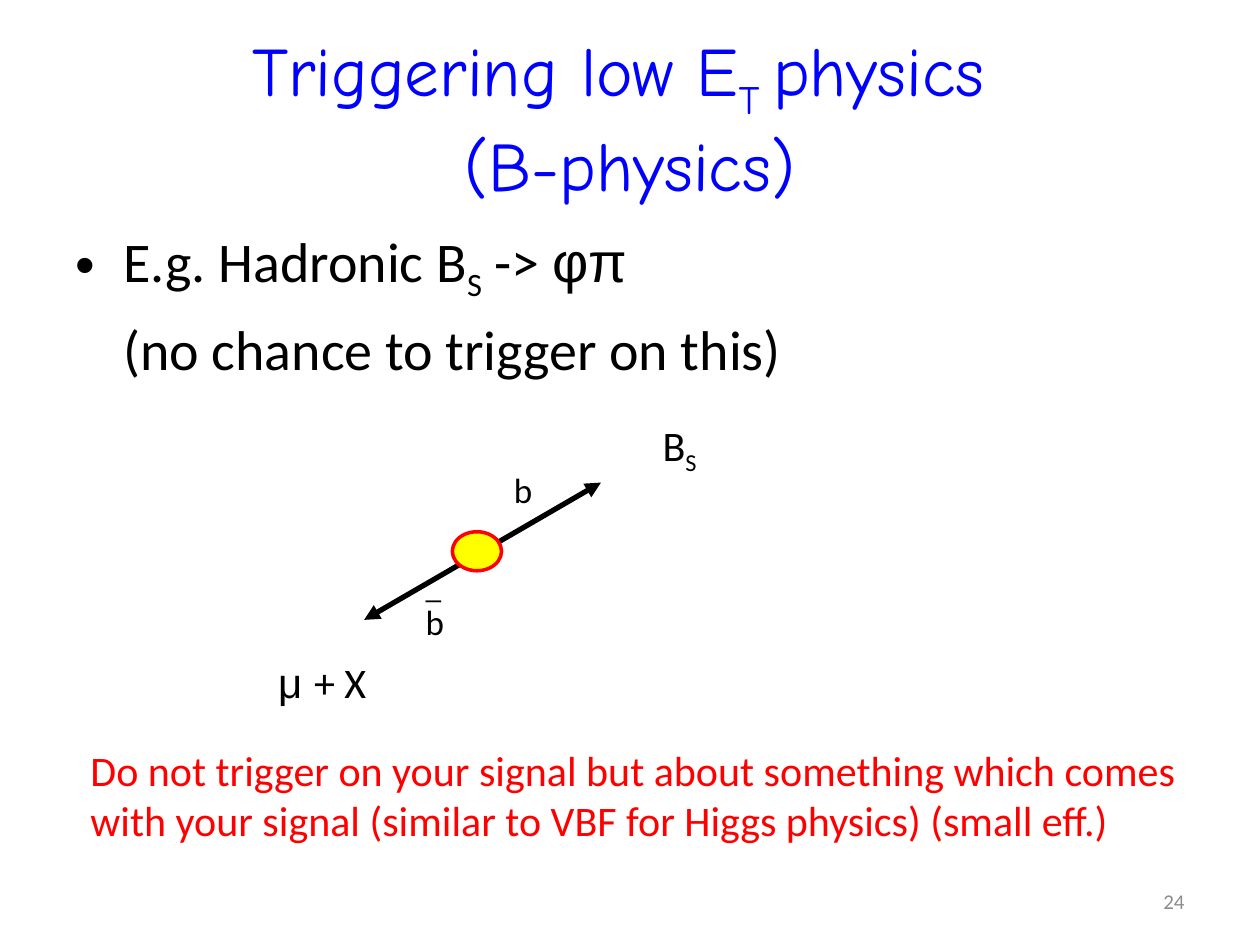
"""Build the slide on triggering low transverse energy physics."""
import pptx
import pptx.util
import pptx.dml.color
import pptx.enum.shapes
import pptx.enum.text
import pptx.oxml

Inches, Pt = pptx.util.Inches, pptx.util.Pt
ALIGN, ANCHOR = pptx.enum.text.PP_ALIGN, pptx.enum.text.MSO_ANCHOR
NAMESPACE = 'xmlns:a="http://schemas.openxmlformats.org/drawingml/2006/main"'
COLOURS = {"title": "0000FF", "text": "000000", "accent": "FF0000",
           "vertex": "FFFF00", "number": "8C8C8C"}

BODY, GREEK, SUB = "Calibri", "Arial", "sub"
TITLE = [[("Triggering low E", ""), ("T ", SUB), ("physics ", ""), ("\n", ""),
          ("(B-physics)", "")]]
POINTS = [[("E.g. Hadronic B", ""), ("S", SUB), (" -> ", ""), ("φπ", GREEK)],
          [("(no chance to trigger on this)", "")]]
NUMBER = [[("24", "")]]
LABELS = [
    ((3.98, 3.67, 0.35, 0.44), 20, "text", [[("b", "")]]),
    ((3.28, 4.72, 0.35, 0.44), 20, "text", [[("b", "")]]),
    ((3.28, 4.45, 0.33, 0.4), 18, "text", [[("_", "")]]),
    ((5.16, 3.28, 0.49, 0.5), 24, "text", [[("B", ""), ("S", SUB)]]),
    ((2.11, 5.16, 0.9, 0.5), 24, "text", [[("μ ", GREEK), ("+ X", "")]]),
    ((0.62, 5.86, 8.96, 0.91), 24, "accent", [
        [("Do not trigger on your signal but about something which comes", "")],
        [("with your signal (similar to VBF for Higgs physics) (small eff.)", "")]]),
]


def colour(name):
    return pptx.dml.color.RGBColor.from_string(COLOURS[name])


def set_all(target, values):
    for name, value in values.items():
        setattr(target, name, value)


def write(box, lines, size, tint, font=BODY, wrap=True, **layout):
    frame = box.text_frame
    set_all(frame, {"word_wrap": wrap, "auto_size": pptx.enum.text.MSO_AUTO_SIZE.NONE,
                    "vertical_anchor": layout.pop("anchor", ANCHOR.TOP)})
    for index, line in enumerate(lines):
        para = frame.paragraphs[0] if index == 0 else frame.add_paragraph()
        set_all(para, layout)
        for text, style in line:
            if text == "\n":
                para.add_line_break()
                continue
            span = para.add_run()
            span.text = text
            set_all(span.font, {"size": Pt(size),
                                "name": GREEK if style == GREEK else font})
            span.font.color.rgb = colour(tint)
            if style == SUB:
                span._r.get_or_add_rPr().set("baseline", "-25000")
    return frame


def add_text(shapes, place, *args, **layout):
    box = shapes.add_textbox(*map(Inches, place))
    return write(box, *args, **layout)


def add_points(page):
    frame = add_text(page.shapes, (0.5, 1.75, 9, 1.84), POINTS, 32, "text",
                     space_before=Pt(6.4))
    for para, hanging in zip(frame.paragraphs, (True, False)):
        properties = para._p.get_or_add_pPr()
        properties.set("marL", str(Inches(0.38)))
        properties.set("indent", str(Inches(-0.38 if hanging else 0)))
        if hanging:
            for tag in ('buFont {} typeface="Arial"', 'buChar {} char="•"'):
                properties.append(pptx.oxml.parse_xml(f"<a:{tag.format(NAMESPACE)}/>"))


def add_decay(shapes):
    arrow = shapes.add_connector(pptx.enum.shapes.MSO_CONNECTOR.STRAIGHT,
                                 *map(Inches, (2.89, 4.92, 4.77, 3.83)))
    arrow.line.width = Pt(3)
    arrow.line.color.rgb = colour("text")
    outline = arrow.line._get_or_add_ln()
    for end in ("headEnd", "tailEnd"):
        outline.append(pptx.oxml.parse_xml(f'<a:{end} {NAMESPACE} type="triangle"/>'))
    arrow._element.spPr.append(pptx.oxml.parse_xml(f"<a:effectLst {NAMESPACE}/>"))

    vertex = shapes.add_shape(pptx.enum.shapes.MSO_SHAPE.OVAL,
                              *map(Inches, (3.59, 4.22, 0.39, 0.31)))
    vertex.shadow.inherit = False
    vertex.fill.solid()
    vertex.fill.fore_color.rgb = colour("vertex")
    vertex.line.color.rgb = colour("accent")
    vertex.line.width = Pt(2)


def main():
    deck = pptx.Presentation()
    set_all(deck, {"slide_width": Inches(10), "slide_height": Inches(7.5)})
    page = deck.slides.add_slide(deck.slide_layouts[5])
    title = page.shapes.title
    set_all(title, {"left": Inches(0.5), "top": Inches(0.3),
                    "width": Inches(9), "height": Inches(1.25)})
    write(title, TITLE, 39.6, "title", "Comic Neue",
          anchor=ANCHOR.MIDDLE, alignment=ALIGN.CENTER)
    add_points(page)
    add_text(page.shapes, (7.17, 6.95, 2.33, 0.4), NUMBER, 12, "number",
             anchor=ANCHOR.MIDDLE, alignment=ALIGN.RIGHT)
    group = page.shapes.add_group_shape()
    add_decay(group.shapes)
    for place, size, tint, lines in LABELS:
        add_text(group.shapes, place, lines, size, tint, wrap=False)
    deck.save("out.pptx")


if __name__ == "__main__":
    main()
